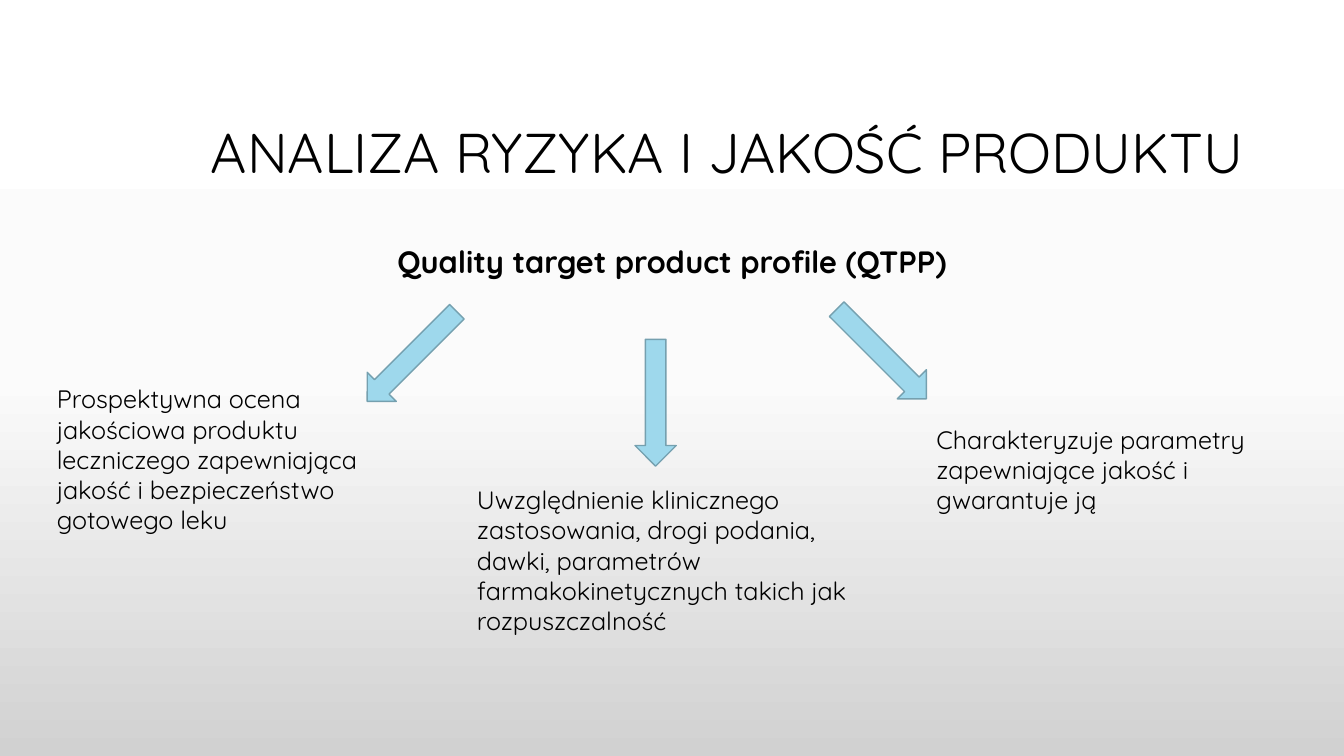
from copy import deepcopy
from dataclasses import dataclass

from pptx import Presentation
from pptx.dml.color import RGBColor as Color
from pptx.enum.shapes import MSO_SHAPE as Shape
from pptx.enum.text import MSO_ANCHOR as Anchor, PP_ALIGN as Align
from pptx.oxml.ns import qn
from pptx.util import Inches, Pt

WIDTH, HEIGHT = Inches(13.33), Inches(7.5)
COLUMNS, ROWS = 16, 9


@dataclass(frozen=True)
class Theme:
    font: str = "Quicksand"
    text: str = "000000"
    arrow_fill: str = "9ED8EC"
    arrow_line: str = "75A0AF"
    background: tuple = ((0, "FFFFFF"), (0.5, "FBFBFB"), (1, "D1D1D1"))
    title_size: int = 40
    heading_size: int = 22
    body_size: int = 18


THEME = Theme()

NOTES = (
    ((0.56, 4.51, 4.28, 2.3),
     "Prospektywna ocena jakościowa produktu leczniczego zapewniająca "
     "jakość i bezpieczeństwo gotowego leku"),
    ((5.56, 5.71, 4.81, 2.3),
     "Uwzględnienie klinicznego zastosowania, drogi podania, dawki, "
     "parametrów farmakokinetycznych takich jak rozpuszczalność"),
    ((11.03, 4.99, 4.6, 1.57),
     "Charakteryzuje parametry zapewniające jakość i gwarantuje ją"),
)
ARROW_SIZE = (0.49, 1.51)
ARROWS = ((7.56, 4.04, 0), (4.66, 3.49, 45), (10.25, 3.46, 315))


def place(column, row, columns, rows):
    return (round(WIDTH * column / COLUMNS), round(HEIGHT * row / ROWS),
            round(WIDTH * columns / COLUMNS), round(HEIGHT * rows / ROWS))


def paint_background(slide):
    fill = slide.background.fill
    fill.gradient()
    fill.gradient_angle = 270
    stop_list = slide.element.find(".//" + qn("a:gsLst"))
    stop_list.append(deepcopy(stop_list[-1]))
    for stop, (position, color) in zip(fill.gradient_stops, THEME.background):
        stop.position = position
        stop.color.rgb = Color.from_string(color)


def add_text(slide, area, text, size, align=Align.LEFT, anchor=Anchor.TOP,
             spacing=1.0, bold=False):
    text_frame = slide.shapes.add_textbox(*place(*area)).text_frame
    text_frame.word_wrap = True
    text_frame.vertical_anchor = anchor
    text_frame.text = text
    paragraph = text_frame.paragraphs[0]
    paragraph.alignment = align
    paragraph.line_spacing = spacing
    font = paragraph.runs[0].font
    font.name = THEME.font
    font.size = Pt(size)
    font.bold = bold
    font.color.rgb = Color.from_string(THEME.text)


def add_arrow(slide, column, row, rotation):
    arrow = slide.shapes.add_shape(
        Shape.DOWN_ARROW, *place(column, row, *ARROW_SIZE))
    arrow.rotation = rotation
    arrow.shadow.inherit = False
    arrow.fill.solid()
    arrow.fill.fore_color.rgb = Color.from_string(THEME.arrow_fill)
    arrow.line.color.rgb = Color.from_string(THEME.arrow_line)
    arrow.line.width = Pt(1)


def main():
    presentation = Presentation()
    presentation.slide_width, presentation.slide_height = WIDTH, HEIGHT
    slide = presentation.slides.add_slide(presentation.slide_layouts[6])
    paint_background(slide)
    add_text(slide, (2.12, 1.01, 12.98, 1.69),
             "ANALIZA RYZYKA I JAKOŚĆ PRODUKTU ", THEME.title_size,
             Align.RIGHT, Anchor.MIDDLE, spacing=0.9)
    add_text(slide, (0.9, 2.88, 14.2, 0.83),
             "Quality target product profile (QTPP)", THEME.heading_size,
             Align.CENTER, spacing=0.9, bold=True)
    for area, text in NOTES:
        add_text(slide, area, text, THEME.body_size)
    for column, row, rotation in ARROWS:
        add_arrow(slide, column, row, rotation)
    presentation.save("out.pptx")


if __name__ == "__main__":
    main()
